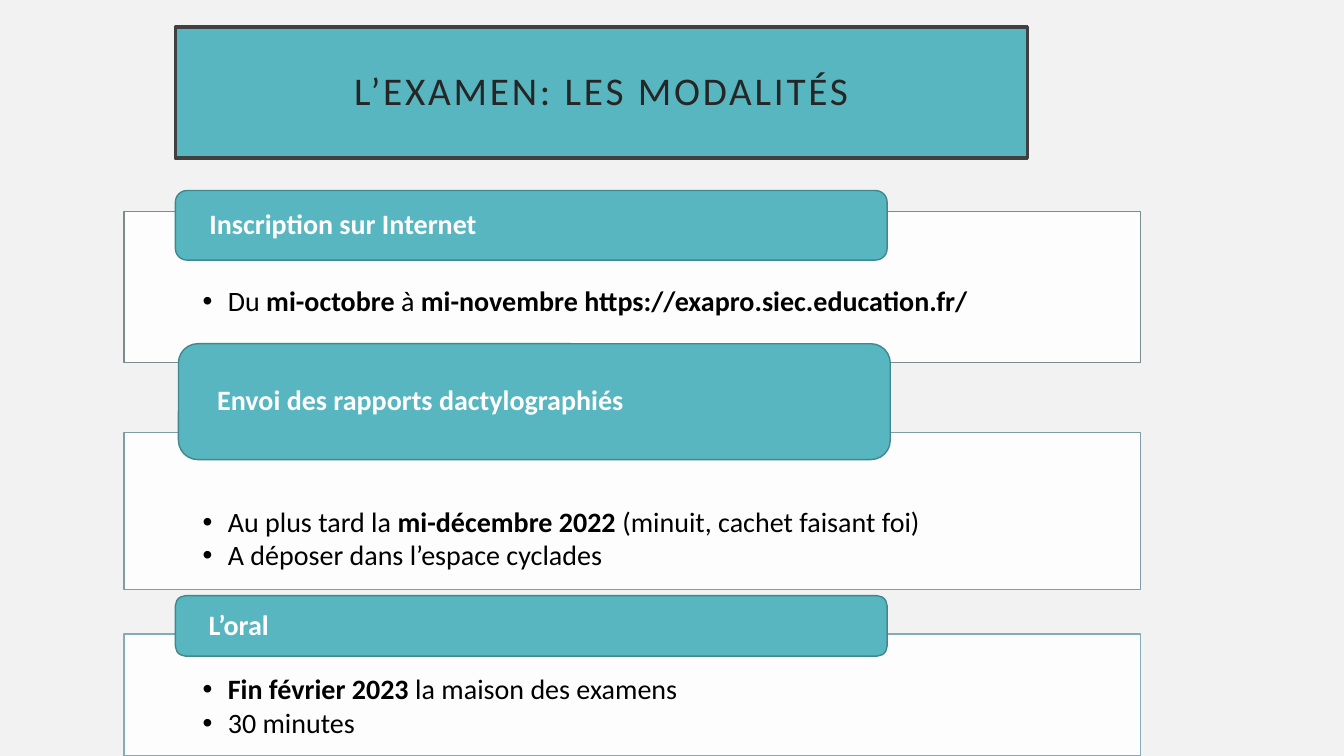
from lxml import etree
from pptx import Presentation
from pptx.dml.color import RGBColor
from pptx.enum.shapes import MSO_SHAPE
from pptx.enum.text import MSO_ANCHOR, PP_ALIGN
from pptx.oxml.ns import qn
from pptx.util import Inches, Pt

RECT, ROUND = MSO_SHAPE.RECTANGLE, MSO_SHAPE.ROUNDED_RECTANGLE
TOP, MIDDLE = MSO_ANCHOR.TOP, MSO_ANCHOR.MIDDLE
LEFT, CENTER = PP_ALIGN.LEFT, PP_ALIGN.CENTER

PAPER = RGBColor(0xF2, 0xF2, 0xF2)
WHITE = RGBColor(0xFF, 0xFF, 0xFF)
BLACK = RGBColor(0x00, 0x00, 0x00)
INK = RGBColor(0x26, 0x26, 0x26)
FRAME = RGBColor(0x40, 0x40, 0x40)
TEAL = RGBColor(0x58, 0xB6, 0xC0)
EDGE = RGBColor(0x41, 0x87, 0x8E)
GRAY = RGBColor(0x7A, 0x8C, 0x8E)
SAGE = RGBColor(0x7E, 0x9E, 0xA3)
MIST = RGBColor(0x84, 0xAC, 0xB6)

FONT = "Calibri"
WIDE, HIGH = Inches(13.33), Inches(7.5)

# Places are percentages of the slide's width and height.
PANEL_X, PANEL_W = 9.23, 75.62
HEAD_X, HEAD_W = 13.05, 52.96
PAD, LOW_PAD = 0.41, 0.75  # top insets of a panel, in inches

# Panel top, height, line and inset; header left, top, height and text;
# bullets, each a list of (text, bold).
STEPS = [
    ((28, 20, GRAY, LOW_PAD),
     (HEAD_X, 25.2, 9.2, "Inscription sur Internet"),
     [[("Du ", False), ("mi-octobre ", True), ("à ", False),
       ("mi-novembre https://exapro.siec.education.fr/", True)]]),
    ((57.2, 20.8, SAGE, LOW_PAD),
     (13.28, 45.47, 15.33, "Envoi des rapports dactylographiés"),
     [[("Au plus tard la ", False), ("mi-décembre 2022 ", True),
       ("(minuit, cachet faisant foi)", False)],
      [("A déposer dans l’espace cyclades", False)]]),
    ((83.87, 16.13, MIST, PAD),
     (HEAD_X, 78.8, 8, "L’oral"),
     [[("Fin février 2023", True), (" la maison des examens", False)],
      [("30 minutes", False)]]),
]


def add_box(slide, kind, place, fill, line, weight=1):
    x, y, w, h = place
    box = slide.shapes.add_shape(
        kind, round(WIDE * x / 100), round(HIGH * y / 100),
        round(WIDE * w / 100), round(HIGH * h / 100))
    box.shadow.inherit = False
    box.fill.solid()
    box.fill.fore_color.rgb = fill
    box.line.color.rgb = line
    box.line.width = Pt(weight)
    return box


def set_frame(box, anchor, side, top, low):
    frame = box.text_frame
    frame.word_wrap = True
    frame.vertical_anchor = anchor
    frame.margin_left = frame.margin_right = Inches(side)
    frame.margin_top, frame.margin_bottom = Inches(top), Inches(low)
    return frame


def style(para, size, color, align=LEFT):
    para.alignment = align
    para.line_spacing = 0.9
    font = para.font
    font.name, font.size = FONT, Pt(size)
    font.color.rgb = color


def add_bullet(para):
    props = para._p.get_or_add_pPr()
    props.set("marL", str(Inches(0.25)))
    props.set("indent", str(-Inches(0.25)))
    etree.SubElement(props, qn("a:buFont")).set("typeface", "Arial")
    etree.SubElement(props, qn("a:buChar")).set("char", "•")


def add_panel(slide, y, h, line, top, items):
    box = add_box(slide, RECT, (PANEL_X, y, PANEL_W, h), WHITE, line)
    tint = box.fill._xPr.find(qn("a:solidFill"))[0]
    etree.SubElement(tint, qn("a:alpha")).set("val", "90000")
    frame = set_frame(box, TOP, 0.78, top, 0.16)
    for i, runs in enumerate(items):
        para = frame.add_paragraph() if i else frame.paragraphs[0]
        add_bullet(para)
        style(para, 20, BLACK)
        para.space_after = Pt(2.5)
        for text, bold in runs:
            run = para.add_run()
            run.text = text
            run.font.bold = bold


def add_head(slide, x, y, h, text):
    box = add_box(slide, ROUND, (x, y, HEAD_W, h), TEAL, EDGE)
    # The round corner pushes the text in as the header grows.
    side = 0.27 + 0.05 * box.height / Inches(1)
    para = set_frame(box, MIDDLE, side, 0, 0).paragraphs[0]
    para.text = text
    style(para, 20, WHITE)
    para.font.bold = True


def add_title(slide, text):
    box = add_box(slide, RECT, (HEAD_X, 3.6, 63.39, 17.33), TEAL, FRAME, 2.5)
    para = set_frame(box, MIDDLE, 0.2, 0.2, 0.2).paragraphs[0]
    para.text = text
    style(para, 28, INK, CENTER)
    para.runs[0]._r.get_or_add_rPr().set("spc", "200")


def main():
    deck = Presentation()
    deck.slide_width, deck.slide_height = WIDE, HIGH
    slide = deck.slides.add_slide(deck.slide_layouts[6])
    slide.background.fill.solid()
    slide.background.fill.fore_color.rgb = PAPER
    for panel, head, items in STEPS:
        add_panel(slide, *panel, items)
        add_head(slide, *head)
    add_title(slide, "L’EXAMEN: LES MODALITÉS")
    deck.save("out.pptx")


if __name__ == "__main__":
    main()
